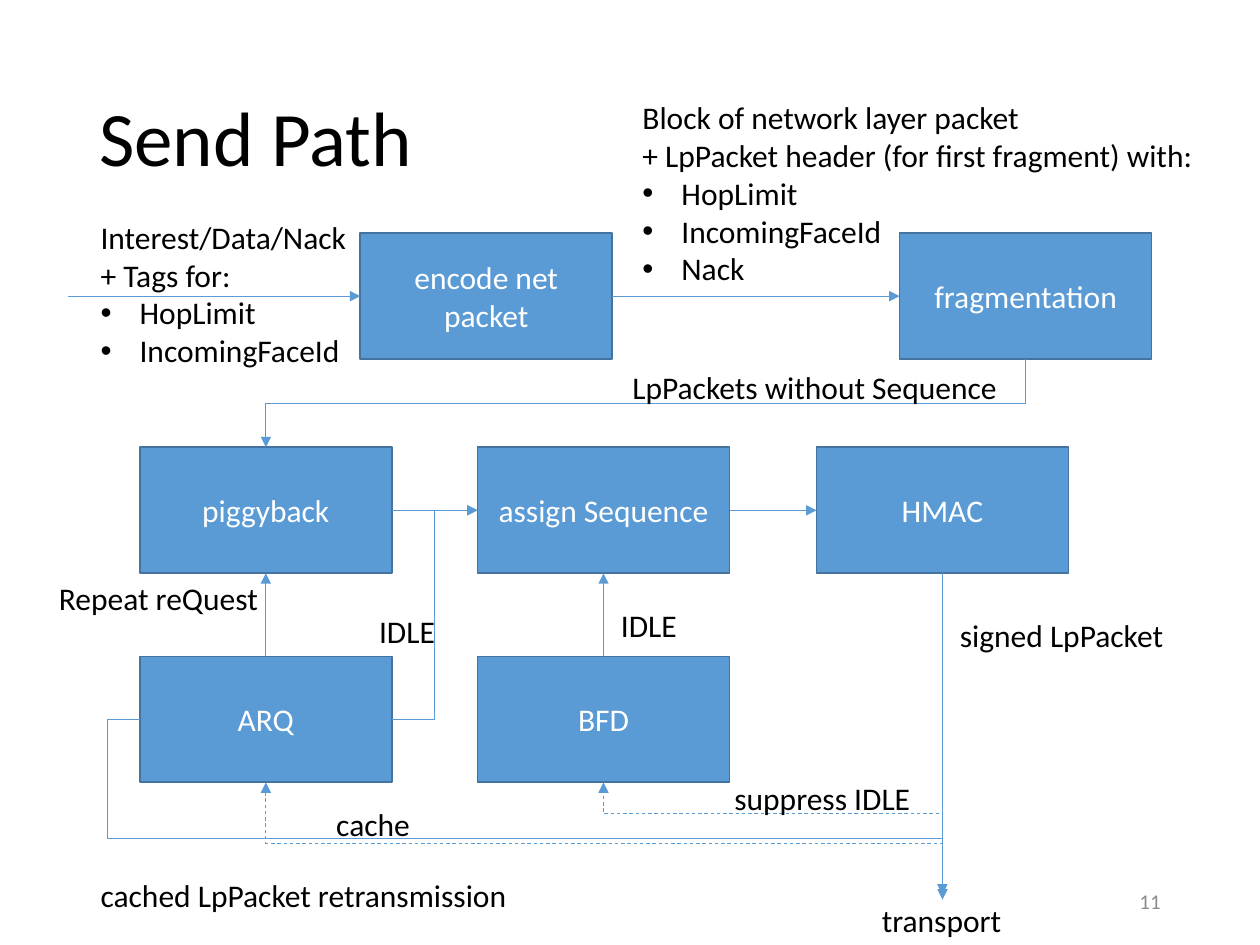
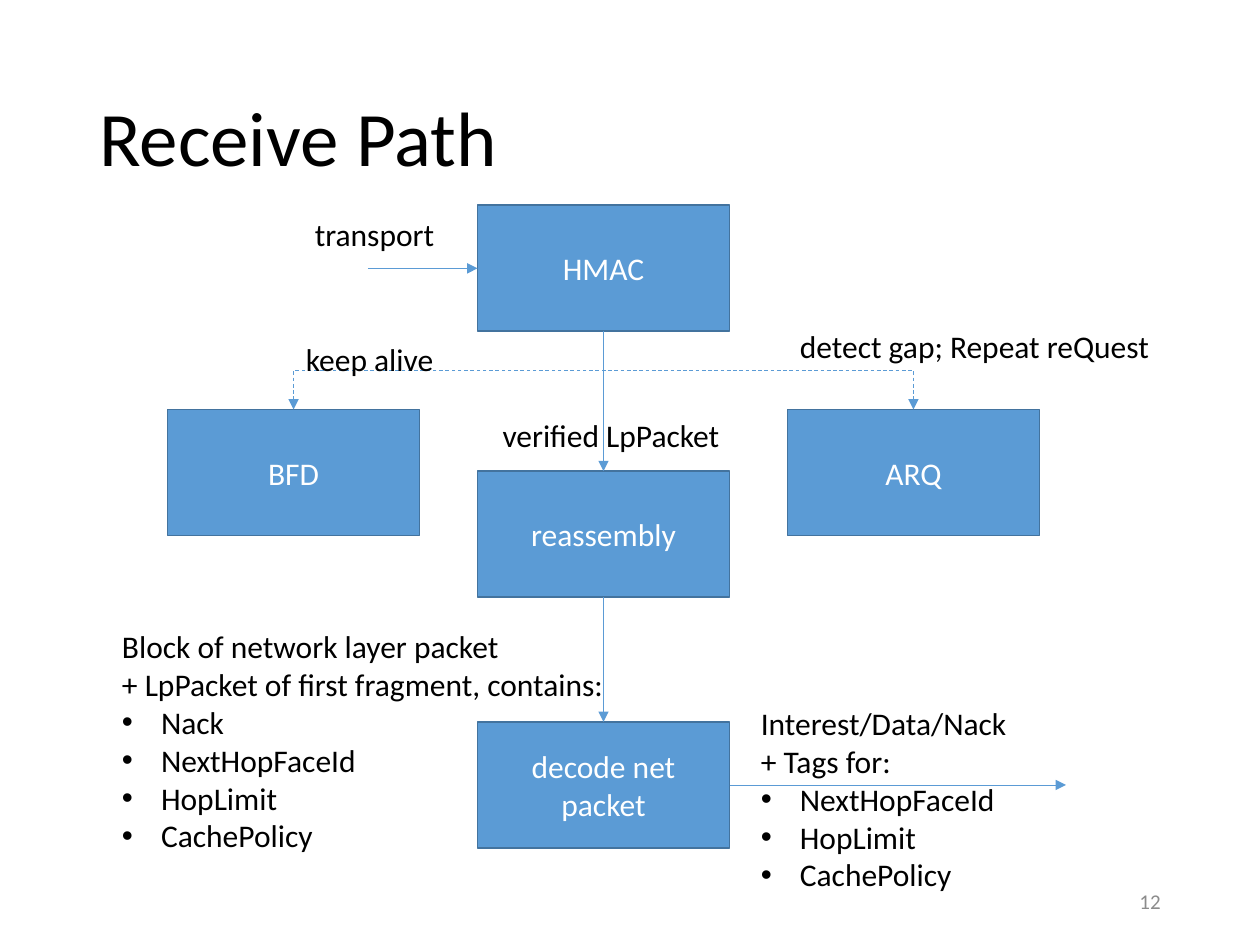
from dataclasses import dataclass
from typing import Any, NamedTuple

from lxml import etree
from pptx import Presentation
from pptx.dml.color import RGBColor
from pptx.enum.dml import MSO_LINE
from pptx.enum.shapes import MSO_CONNECTOR, MSO_SHAPE
from pptx.enum.text import MSO_ANCHOR, MSO_AUTO_SIZE, PP_ALIGN
from pptx.oxml.ns import qn
from pptx.slide import Slide
from pptx.util import Inches, Pt

RECT = MSO_SHAPE.RECTANGLE
STRAIGHT, ELBOW = MSO_CONNECTOR.STRAIGHT, MSO_CONNECTOR.ELBOW
DASH = MSO_LINE.DASH
MIDDLE, TOP_EDGE = MSO_ANCHOR.MIDDLE, MSO_ANCHOR.TOP
LEFT_AL, CENTER, RIGHT_AL = PP_ALIGN.LEFT, PP_ALIGN.CENTER, PP_ALIGN.RIGHT
FIT = MSO_AUTO_SIZE.SHAPE_TO_FIT_TEXT
TOP, LEFT, BOTTOM, RIGHT = range(4)  # connection sites of a box


@dataclass(frozen=True)
class Theme:
    font: str = "Calibri"
    ink: RGBColor = RGBColor(0, 0, 0)
    pale: RGBColor = RGBColor(255, 255, 255)
    gray: RGBColor = RGBColor(0x8C, 0x8C, 0x8C)
    fill: RGBColor = RGBColor(0x5B, 0x9B, 0xD5)
    edge: RGBColor = RGBColor(0x43, 0x73, 0x9E)
    title: int = 44
    body: int = 18
    small: int = 12
    rim: float = 1
    wire: float = 0.5


THEME = Theme()
BOX_W, BOX_H = 2, 1
INDENT = 0.31

# Text styles: frame values, paragraph values, font values
STYLES: dict[str, tuple[dict, dict, dict]] = {
    "title": ({"word_wrap": True, "vertical_anchor": MIDDLE},
              {"alignment": LEFT_AL, "line_spacing": 0.9},
              {"size": Pt(THEME.title), "color": THEME.ink}),
    "page": ({"word_wrap": True, "vertical_anchor": MIDDLE},
             {"alignment": RIGHT_AL},
             {"size": Pt(THEME.small), "color": THEME.gray}),
    "box": ({"word_wrap": True, "vertical_anchor": MIDDLE},
            {"alignment": CENTER},
            {"size": Pt(THEME.body), "color": THEME.pale}),
    "note": ({"word_wrap": False, "vertical_anchor": TOP_EDGE, "auto_size": FIT},
             {"alignment": LEFT_AL},
             {"size": Pt(THEME.body), "color": THEME.ink}),
}


class Box(NamedTuple):
    text: str
    x: float
    y: float

    def side(self, site: int) -> tuple[float, float]:
        dx, dy = ((0.5, 0), (0, 0.5), (0.5, 1), (1, 0.5))[site]
        return self.x + dx * BOX_W, self.y + dy * BOX_H


class Note(NamedTuple):
    x: float
    y: float
    w: float
    h: float
    lines: tuple[str, ...]
    items: tuple[str, ...] = ()


class Link(NamedTuple):
    """An end is a (box text, site) pair or a plain (x, y) point."""
    start: tuple
    end: tuple
    bent: bool = False
    dash: bool = False
    bends: tuple[float, ...] = ()


class Page(NamedTuple):
    title: str
    number: int
    boxes: tuple[Box, ...]
    links: tuple[Link, ...]
    notes: tuple[Note, ...]


def apply(target: Any, values: dict) -> None:
    for name, value in values.items():
        setattr(target, name, value)


def write(shape: Any, style: str, lines: tuple[str, ...],
          items: tuple[str, ...] = ()) -> None:
    frame_set, para_set, font_set = STYLES[style]
    frame = shape.text_frame
    apply(frame, frame_set)
    for i, text in enumerate(lines + items):
        para = frame.add_paragraph() if i else frame.paragraphs[0]
        apply(para, para_set)
        run = para.add_run()
        run.text = text
        run.font.name, run.font.size = THEME.font, font_set["size"]
        run.font.color.rgb = font_set["color"]
        if i >= len(lines):
            props = para._p.get_or_add_pPr()
            props.set("marL", str(Inches(INDENT)))
            props.set("indent", str(-Inches(INDENT)))
            etree.SubElement(props, qn("a:buFont")).set("typeface", "Arial")
            etree.SubElement(props, qn("a:buChar")).set("char", "•")


def add_text(slide: Slide, style: str, note: Note) -> None:
    area = slide.shapes.add_textbox(*map(Inches, note[:4]))
    write(area, style, note.lines, note.items)


def add_box(slide: Slide, box: Box) -> Any:
    shape = slide.shapes.add_shape(
        RECT, *map(Inches, (box.x, box.y, BOX_W, BOX_H)))
    shape.shadow.inherit = False
    shape.fill.solid()
    shape.fill.fore_color.rgb = THEME.fill
    shape.line.color.rgb = THEME.edge
    shape.line.width = Pt(THEME.rim)
    write(shape, "box", (box.text,))
    return shape


def turn(wire: Any, a: tuple[float, float], b: tuple[float, float]) -> None:
    """Make an elbow leave its start downwards instead of sideways."""
    w, h = abs(b[1] - a[1]), abs(b[0] - a[0])
    mid_x, mid_y = (a[0] + b[0]) / 2, (a[1] + b[1]) / 2
    apply(wire, {"left": Inches(mid_x - w / 2), "top": Inches(mid_y - h / 2),
                 "width": Inches(w), "height": Inches(h)})
    frame = wire.element.spPr.find(qn("a:xfrm"))
    for name in ("flipH", "flipV"):
        frame.attrib.pop(name, None)
    if b[0] < a[0]:
        frame.set("rot", str(90 * 60000))
    else:
        frame.set("rot", str(270 * 60000))
        frame.set("flipH", "1")


def bend(wire: Any, bends: tuple[float, ...]) -> None:
    """Place the corners of an elbow as shares of its size."""
    geom = wire.element.spPr.find(qn("a:prstGeom"))
    geom.set("prst", f"bentConnector{len(bends) + 2}")
    guides = geom.find(qn("a:avLst"))
    if guides is None:
        guides = etree.SubElement(geom, qn("a:avLst"))
    for i, share in enumerate(bends, 1):
        guide = etree.SubElement(guides, qn("a:gd"))
        guide.set("name", f"adj{i}")
        guide.set("fmla", f"val {round(share * 100000)}")


def add_link(slide: Slide, link: Link, boxes: dict[str, Box],
             shapes: dict[str, Any]) -> None:
    a, b = (boxes[end[0]].side(end[1]) if end[0] in boxes else end
            for end in (link.start, link.end))
    wire = slide.shapes.add_connector(
        ELBOW if link.bent else STRAIGHT, *map(Inches, (*a, *b)))
    if link.bent:
        if link.start[1] == BOTTOM:
            turn(wire, a, b)
        bend(wire, link.bends or (0.5,))
    else:
        for end, join in ((link.start, wire.begin_connect),
                          (link.end, wire.end_connect)):
            if end[0] in shapes:
                join(shapes[end[0]], end[1])
    wire.line.color.rgb = THEME.fill
    wire.line.width = Pt(THEME.wire)
    if link.dash:
        wire.line.dash_style = DASH
    tail = etree.SubElement(wire.line._get_or_add_ln(), qn("a:tailEnd"))
    tail.set("type", "triangle")
    etree.SubElement(wire.element.spPr, qn("a:effectLst"))


def add_page(deck: Any, page: Page) -> None:
    slide = deck.slides.add_slide(deck.slide_layouts[6])
    # Title and page number
    add_text(slide, "title", Note(0.69, 0.4, 8.62, 1.45, (page.title,)))
    add_text(slide, "page", Note(7.06, 6.95, 2.25, 0.4, (str(page.number),)))
    # Diagram
    boxes = {box.text: box for box in page.boxes}
    shapes = {box.text: add_box(slide, box) for box in page.boxes}
    for link in page.links:
        add_link(slide, link, boxes, shapes)
    for note in page.notes:
        add_text(slide, "note", note)


# Columns and rows of the send diagram
COLS = (1.11, 3.79, 6.48)
ROWS = (1.85, 3.55, 5.21)

SEND = Page(
    "Send Path", 11,
    boxes=(
        Box("encode net packet", 2.86, ROWS[0]),
        Box("fragmentation", 7.14, ROWS[0]),
        Box("piggyback", COLS[0], ROWS[1]),
        Box("assign Sequence", COLS[1], ROWS[1]),
        Box("HMAC", COLS[2], ROWS[1]),
        Box("ARQ", COLS[0], ROWS[2]),
        Box("BFD", COLS[1], ROWS[2]),
    ),
    links=(
        Link((0.54, 2.35), ("encode net packet", LEFT)),
        Link(("encode net packet", RIGHT), ("fragmentation", LEFT)),
        Link(("fragmentation", BOTTOM), ("piggyback", TOP), bent=True),
        Link(("piggyback", RIGHT), ("assign Sequence", LEFT)),
        Link(("assign Sequence", RIGHT), ("HMAC", LEFT)),
        Link(("ARQ", TOP), ("piggyback", BOTTOM)),
        Link(("BFD", TOP), ("assign Sequence", BOTTOM)),
        Link(("HMAC", BOTTOM), (7.48, 7.14)),
        Link(("ARQ", RIGHT), ("assign Sequence", LEFT), bent=True),
        Link(("HMAC", BOTTOM), ("BFD", BOTTOM), True, True, (1.15,)),
        Link(("HMAC", BOTTOM), ("ARQ", BOTTOM), True, True, (1.29,)),
        Link(("ARQ", LEFT), (7.48, 7.1), True, bends=(-0.04, 0.68)),
    ),
    notes=(
        Note(0.7, 1.68, 2.17, 1.31, ("Interest/Data/Nack", "+ Tags for:"),
             ("HopLimit", "IncomingFaceId")),
        Note(5, 0.73, 4.62, 1.62,
             ("Block of network layer packet",
              "+ LpPacket header (for first fragment) with:"),
             ("HopLimit", "IncomingFaceId", "Nack")),
        Note(4.92, 2.87, 3.11, 0.4, ("LpPackets without Sequence",)),
        Note(0.37, 4.55, 1.8, 0.4, ("Repeat reQuest",)),
        Note(6.9, 7.1, 1.16, 0.4, ("transport",)),
        Note(4.83, 4.76, 0.65, 0.4, ("IDLE",)),
        Note(2.91, 4.81, 0.65, 0.4, ("IDLE",)),
        Note(2.57, 6.34, 0.79, 0.4, ("cache",)),
        Note(7.52, 4.84, 1.83, 0.4, ("signed LpPacket",)),
        Note(5.73, 6.13, 1.61, 0.4, ("suppress IDLE",)),
        Note(0.7, 6.9, 3.46, 0.4, ("cached LpPacket retransmission",)),
    ),
)

RECEIVE = Page(
    "Receive Path", 12,
    boxes=(
        Box("HMAC", COLS[1], 1.63),
        Box("reassembly", COLS[1], 3.74),
        Box("decode net packet", COLS[1], 5.73),
        Box("BFD", COLS[1] - 2.46, 3.25),
        Box("ARQ", COLS[1] + 2.46, 3.25),
    ),
    links=(
        Link((2.92, 2.13), ("HMAC", LEFT)),
        Link(("HMAC", BOTTOM), ("reassembly", TOP)),
        Link(("HMAC", BOTTOM), ("BFD", TOP), bent=True, dash=True),
        Link(("HMAC", BOTTOM), ("ARQ", TOP), bent=True, dash=True),
        Link(("reassembly", BOTTOM), ("decode net packet", TOP)),
        Link(("decode net packet", RIGHT), (8.46, 6.23)),
    ),
    notes=(
        Note(2.4, 1.66, 1.16, 0.4, ("transport",)),
        Note(2.33, 2.65, 1.23, 0.4, ("keep alive",)),
        Note(6.25, 2.55, 3.01, 0.4, ("detect gap; Repeat reQuest",)),
        Note(3.89, 3.25, 1.94, 0.4, ("verified LpPacket",)),
        Note(0.87, 4.93, 4.07, 1.92,
             ("Block of network layer packet",
              "+ LpPacket of first fragment, contains:"),
             ("Nack", "NextHopFaceId", "HopLimit", "CachePolicy")),
        Note(5.94, 5.54, 2.17, 1.62, ("Interest/Data/Nack", "+ Tags for:"),
             ("NextHopFaceId", "HopLimit", "CachePolicy")),
    ),
)


def main() -> None:
    deck = Presentation()
    deck.slide_width, deck.slide_height = Inches(10), Inches(7.5)
    for page in (SEND, RECEIVE):
        add_page(deck, page)
    deck.save("out.pptx")


if __name__ == "__main__":
    main()
